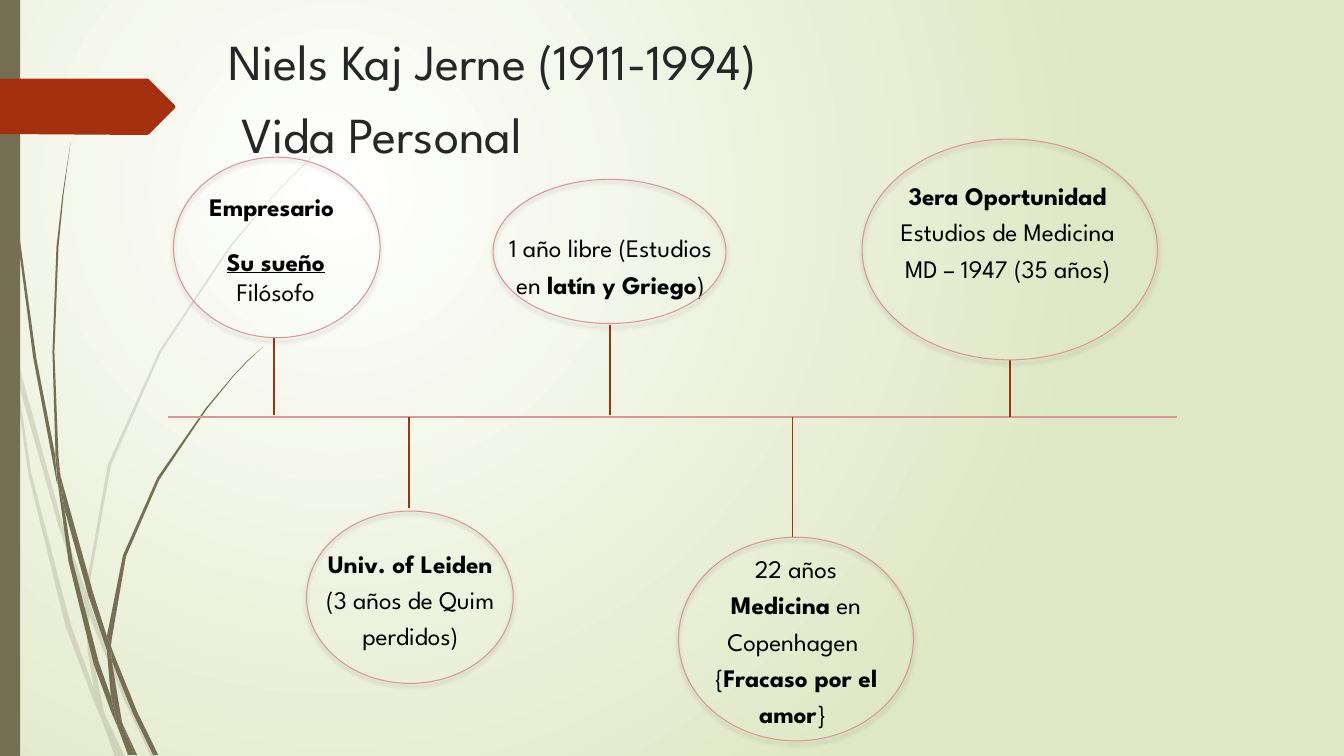
import lxml.etree
import pptx
import pptx.dml.color
import pptx.enum.shapes
import pptx.enum.text
import pptx.oxml.ns
import pptx.util
from pptx.util import Inches

FONT = "League Spartan"
OLIVE, RUST, ROSE = "766F54", "A53010", "D99694"
AXIS_Y = 4.14

# Each blade of grass is the outline of one piece, as x, y corners.
PALE_BLADES = [
    [(0.11, 3.5), (0.09, 3.22), (0, 2.82), (0, 2.99), (0.1, 3.44)],
    [(0.58, 5.22), (0.84, 5.99), (0.85, 5.86), (0.62, 5.2), (0.14, 3.45), (0.17, 3.76)],
    [(0.92, 6.07), (0.88, 5.96), (0.88, 6.1), (1.23, 6.94), (1.5, 7.51), (1.55, 7.51),
     (1.27, 6.92)],
    [(1.19, 7.51), (1.24, 7.51), (1.05, 7.11)],
    [(0.93, 6.83), (0.7, 6.19), (0.31, 4.69), (0.17, 3.76), (0.11, 3.5), (0.28, 4.7),
     (0.65, 6.21), (0.92, 6.93), (1.01, 7.14), (0.99, 7.07)],
    [(0.84, 5.99), (0.87, 6.46), (0.93, 6.83), (0.96, 6.92), (1.05, 7.11), (1.03, 7.06),
     (0.91, 6.46), (0.88, 6.1), (0.88, 6.08)],
    [(0.88, 5.84), (1.1, 4.62), (1.6, 3.49), (2.29, 2.45), (2.68, 1.98), (2.9, 1.75),
     (3.12, 1.54), (3.12, 1.53), (2.89, 1.75), (2.68, 1.97), (2.28, 2.44), (1.58, 3.48),
     (1.07, 4.61), (0.85, 5.84), (0.85, 5.86), (0.88, 5.96)],
    [(1.01, 7.14), (1.14, 7.51), (1.19, 7.51)],
    [(0.88, 6.08), (0.88, 6.1), (0.88, 5.96), (0.85, 5.86), (0.84, 5.99)],
    [(0.96, 6.92), (0.93, 6.83), (0.99, 7.07), (1.01, 7.14), (1.19, 7.51), (1.05, 7.11)],
]
DARK_BLADES = [
    [(0.07, 1.1), (0.17, 2.33), (0.33, 3.55), (0.56, 4.77), (0.57, 4.81), (0.55, 4.57),
     (0.55, 4.53), (0.36, 3.55), (0.19, 2.32), (0.08, 1.09), (0.05, 0.48), (0.04, 0),
     (0.03, 0), (0.04, 0.48)],
    [(0.88, 5.92), (1.06, 6.45), (1.06, 6.31), (0.93, 5.9), (0.6, 4.72), (0.64, 5.05)],
    [(1.13, 6.49), (1.1, 6.41), (1.11, 6.56), (1.32, 7.08), (1.52, 7.49), (1.57, 7.49),
     (1.36, 7.06)],
    [(1.1, 6.91), (0.98, 6.57), (0.72, 5.56), (0.64, 5.05), (0.57, 4.77), (0.68, 5.57),
     (0.93, 6.59), (1.11, 7.08), (1.17, 7.22), (1.16, 7.17)],
    [(0.6, 4.72), (0.58, 4.53), (0.54, 3.49), (0.58, 2.45), (0.63, 1.93), (0.7, 1.41),
     (0.62, 1.93), (0.56, 2.45), (0.52, 3.49), (0.55, 4.49)],
    [(1.33, 7.49), (1.36, 7.49), (1.22, 7.19)],
    [(0.57, 4.77), (0.64, 5.05), (0.6, 4.72), (0.55, 4.49), (0.55, 4.53)],
    [(1.11, 6.33), (1.25, 5.52), (1.58, 4.76), (2.05, 4.06), (2.31, 3.74), (2.45, 3.59),
     (2.61, 3.44), (2.45, 3.58), (2.31, 3.73), (2.04, 4.05), (1.56, 4.74), (1.22, 5.51),
     (1.06, 6.31), (1.1, 6.41)],
    [(1.17, 7.22), (1.27, 7.49), (1.31, 7.49)],
    [(1.06, 6.45), (1.1, 6.91), (1.16, 7.06), (1.22, 7.19), (1.21, 7.16), (1.11, 6.56),
     (1.09, 6.51)],
    [(1.06, 6.45), (1.09, 6.51), (1.11, 6.56), (1.1, 6.41), (1.06, 6.31)],
    [(1.16, 7.06), (1.1, 6.91), (1.16, 7.17), (1.17, 7.22), (1.3, 7.49), (1.33, 7.49),
     (1.22, 7.19)],
]
TAG = [(0, 0.78), (1.46, 0.78), (1.48, 0.79), (1.73, 1.04), (1.74, 1.06), (1.73, 1.08),
       (1.48, 1.33), (1.46, 1.34), (0, 1.33)]

# Each milestone has its oval, its stem (x, top, bottom) and its text boxes.
# A text box has a place, a line spacing and paragraphs of (text, style) runs.
MILESTONES = [
    ((1.72, 1.56, 2.05, 1.79), (2.72, 3.35, 4.12),
     [((1.85, 1.85, 1.76, 0.4), 1, [[("Empresario ", "b")]]),
      ((2.06, 2.39, 1.35, 0.71), 1, [[("Su sueño", "bu")], [("Filósofo", "")]])]),
    ((3.04, 5.07, 2.05, 1.71), (4.06, AXIS_Y, 5.04),
     [((2.84, 5.33, 2.46, 1.18), 1.2,
       [[("Univ. of Leiden", "b")], [("(3 años de Quim perdidos)", "")]])]),
    ((4.89, 1.78, 2.31, 1.43), (6.05, 3.22, 4.12),
     [((4.9, 2.2, 2.31, 1.16), 1.2,
       [[("1 año libre (Estudios en ", ""), ("latín y Griego", "b"), (")", "")]])]),
    ((6.73, 5.33, 2.33, 2.02), (7.86, AXIS_Y, 5.33),
     [((6.73, 5.38, 2.33, 1.91), 1.2,
       [[(" 22 años ", "")], [("Medicina", "b"), (" en Copenhagen ", "")],
        [("{", ""), ("Fracaso por el amor", "b"), ("} ", "")]])]),
    ((8.55, 1.38, 2.93, 2.19), (10.02, 3.57, AXIS_Y),
     [((8.82, 1.68, 2.35, 2.25), 1.2,
       [[("3era Oportunidad", "b")], [("Estudios de Medicina ", "")],
        [("MD – 1947 (35 años)", "")]])]),
]


def paint(color_format, color):
    """Set a colour format to a hex colour."""
    color_format.rgb = pptx.dml.color.RGBColor.from_string(color)


def add_child(parent, tag, **attributes):
    """Append a DrawingML element and return it."""
    child = lxml.etree.SubElement(parent, pptx.oxml.ns.qn(tag))
    for key, value in attributes.items():
        child.set(key, str(value))
    return child


def fill_plain(shape, color, alpha=None):
    """Give a shape a flat fill without line or shadow."""
    shape.shadow.inherit = False
    shape.line.fill.background()
    shape.fill.solid()
    paint(shape.fill.fore_color, color)
    if alpha is not None:
        swatch = shape._element.spPr.find(".//" + pptx.oxml.ns.qn("a:srgbClr"))
        add_child(swatch, "a:alpha", val=alpha * 1000)


def set_background(slide):
    """Spread a radial gradient from the upper left of the slide."""
    fill = slide.background.fill
    fill.gradient()
    for stop, position, color in zip(fill.gradient_stops, (0, 1), ("FFFFFF", "DFE8C4")):
        stop.position = position
        paint(stop.color, color)
    gradient = slide.background._cSld.find(".//" + pptx.oxml.ns.qn("a:gradFill"))
    gradient.remove(gradient.find(pptx.oxml.ns.qn("a:lin")))
    circle = add_child(gradient, "a:path", path="circle")
    add_child(circle, "a:fillToRect", l=50000, t=50000, r=100000, b=100000)


def add_outline(shapes, corners, color, alpha=None):
    """Draw a filled outline through the corners."""
    start, *others = [(Inches(x), Inches(y)) for x, y in corners]
    builder = shapes.build_freeform(*start)
    builder.add_line_segments(others, close=True)
    fill_plain(builder.convert_to_shape(), color, alpha)


def add_grass(slide, blades, alpha=None):
    """Draw blades of grass as one group."""
    tuft = slide.shapes.add_group_shape()
    for corners in blades:
        add_outline(tuft.shapes, corners, OLIVE, alpha)


def add_text(slide, paragraphs, *, place, size=18, color="000000", spacing=1.0,
             align=pptx.enum.text.PP_ALIGN.CENTER):
    """Add a text box with paragraphs of styled runs, or None for a line break."""
    frame = slide.shapes.add_textbox(*map(Inches, place)).text_frame
    frame.word_wrap = True
    for index, runs in enumerate(paragraphs):
        paragraph = frame.add_paragraph() if index else frame.paragraphs[0]
        paragraph.alignment = align
        paragraph.line_spacing = spacing
        for text, style in runs:
            if text is None:
                paragraph.add_line_break()
                continue
            run = paragraph.add_run()
            run.text = text
            run.font.name = FONT
            run.font.size = pptx.util.Pt(size)
            run.font.bold = "b" in style
            run.font.underline = "u" in style
            paint(run.font.color, color)


def add_line(slide, start, end, color):
    """Draw a straight line without shadow."""
    line = slide.shapes.add_connector(
        pptx.enum.shapes.MSO_CONNECTOR.STRAIGHT, *map(Inches, start + end))
    line.line.width = pptx.util.Pt(1.25)
    paint(line.line.color, color)
    add_child(line._element.spPr, "a:effectLst")


def add_oval(slide, place):
    """Draw an open oval with a soft shadow below."""
    oval = slide.shapes.add_shape(pptx.enum.shapes.MSO_SHAPE.OVAL, *map(Inches, place))
    oval.fill.background()
    oval.line.width = pptx.util.Pt(0.75)
    paint(oval.line.color, ROSE)
    oval.shadow.inherit = False
    effects = oval._element.spPr.find(pptx.oxml.ns.qn("a:effectLst"))
    shadow = add_child(effects, "a:outerShdw", blurRad=pptx.util.Pt(3),
                       dist=pptx.util.Pt(2), dir=90 * 60000, rotWithShape=0)
    add_child(add_child(shadow, "a:srgbClr", val="000000"), "a:alpha", val=25000)


def main():
    """Build the timeline slide."""
    deck = pptx.Presentation()
    deck.slide_width, deck.slide_height = Inches(13.33), Inches(7.5)
    slide = deck.slides.add_slide(deck.slide_layouts[6])
    set_background(slide)
    add_grass(slide, PALE_BLADES, alpha=20)
    add_grass(slide, DARK_BLADES)
    edge = slide.shapes.add_shape(pptx.enum.shapes.MSO_SHAPE.RECTANGLE,
                                  *map(Inches, (0, 0, 0.2, 7.5)))
    fill_plain(edge, OLIVE)
    add_outline(slide.shapes, TAG, RUST)
    title = [("Niels Kaj Jerne (1911-1994)", ""), (None, ""), (" Vida Personal", "")]
    add_text(slide, [title], place=(2.17, 0.13, 9, 1.25), size=36, color="262626",
             spacing=1.2, align=pptx.enum.text.PP_ALIGN.LEFT)
    add_line(slide, (1.67, AXIS_Y), (11.67, AXIS_Y), ROSE)
    for oval, (x, top, bottom), notes in MILESTONES:
        for place, spacing, paragraphs in notes:
            add_text(slide, paragraphs, place=place, spacing=spacing)
        add_line(slide, (x, top), (x, bottom), RUST)
        add_oval(slide, oval)
    deck.save("out.pptx")


if __name__ == "__main__":
    main()
